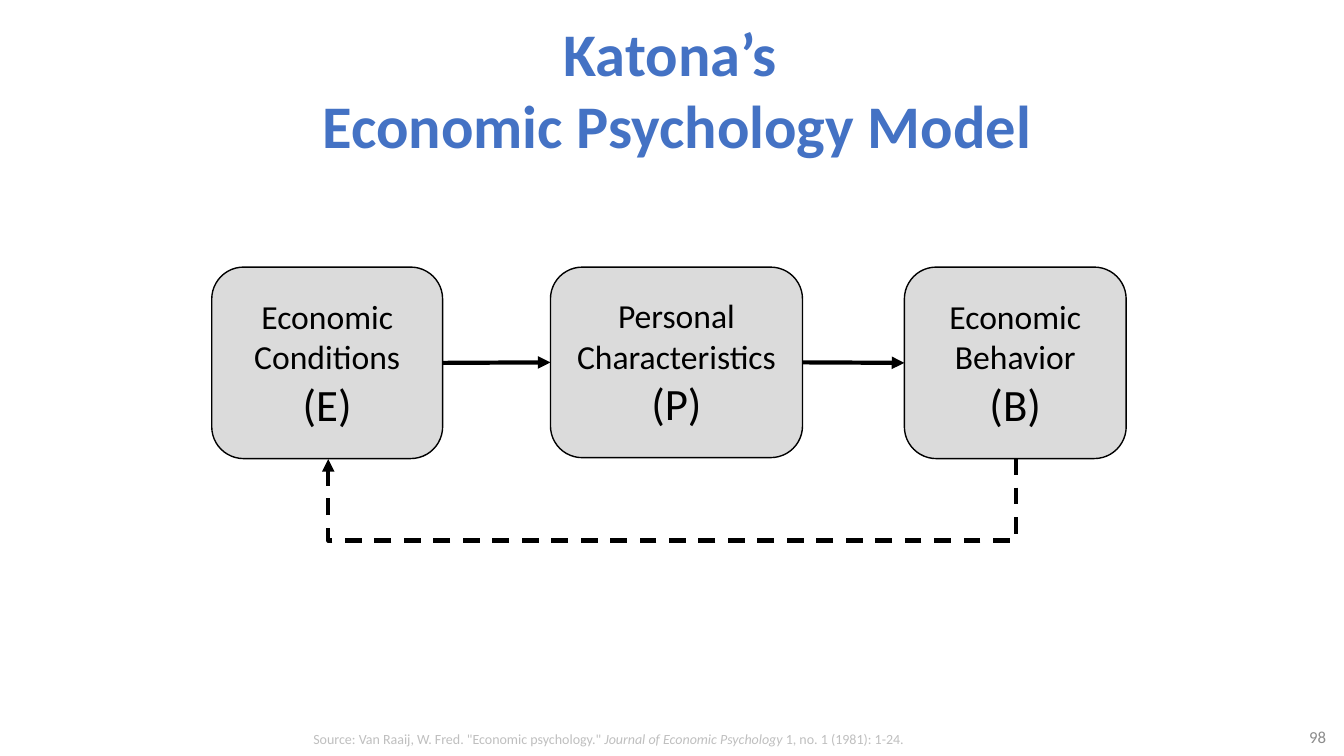
from lxml.etree import SubElement
from pptx import Presentation
from pptx.dml.color import RGBColor
from pptx.enum.dml import MSO_LINE
from pptx.enum.shapes import MSO_CONNECTOR, MSO_SHAPE
from pptx.enum.text import MSO_ANCHOR, PP_ALIGN
from pptx.oxml.ns import qn
from pptx.util import Inches, Pt


def write_line(paragraph, pieces, align, color, **font_format):
    """Fill a paragraph with (text, format) runs; a newline piece is a line break."""
    paragraph.alignment = align
    for text, extra in pieces:
        if text == "\n":
            paragraph.add_line_break()
            continue
        run = paragraph.add_run()
        run.text = text
        run.font.color.rgb = RGBColor.from_string(color)
        for name, value in {"name": "Calibri", **font_format, **extra}.items():
            setattr(run.font, name, value)


def style_arrow(connector):
    connector.line.color.rgb = RGBColor.from_string("000000")
    connector.line.width = Pt(3)
    properties = connector._element.spPr
    SubElement(properties.get_or_add_ln(), qn("a:tailEnd"), type="triangle")
    SubElement(properties, qn("a:effectLst"))


presentation = Presentation()
presentation.slide_width = Inches(13.33)
presentation.slide_height = Inches(7.5)
slide = presentation.slides.add_slide(presentation.slide_layouts[6])

# Title, source and slide number
source = [
    ('Source: Van Raaij, W. Fred. "Economic psychology." ', {}),
    ("Journal of Economic Psychology", {"italic": True}),
    (" 1, no. 1 (1981): 1-24.", {}),
]
title = [
    ("Katona’s ", {"bold": True}),
    ("\n", {}),
    ("Economic Psychology Model", {"bold": True}),
]
texts = [
    ((0.58, 0.15, 12.27, 1.45), title, PP_ALIGN.CENTER, "4472C4", 43.2, MSO_ANCHOR.MIDDLE),
    ((3.01, 7.2, 7.3, 0.27), source, PP_ALIGN.LEFT, "BFBFBF", 10, MSO_ANCHOR.TOP),
    ((12.2, 7.18, 1.05, 0.26), [("98", {})], PP_ALIGN.RIGHT, "8C8C8C", 12, MSO_ANCHOR.MIDDLE),
]
for place, pieces, align, color, size, anchor in texts:
    frame = slide.shapes.add_textbox(*map(Inches, place)).text_frame
    frame.word_wrap = True
    frame.vertical_anchor = anchor
    write_line(frame.paragraphs[0], pieces, align, color, size=Pt(size))

# Model stages
stages = [
    (2.1, 2.29, 1.9, ["Economic Conditions", "(E)"]),
    (5.46, 2.5, 1.89, ["Personal Characteristics", "(P)"]),
    (8.97, 2.2, 1.9, ["Economic", "Behavior", "(B)"]),
]
boxes = []
for left, width, height, lines in stages:
    box = slide.shapes.add_shape(
        MSO_SHAPE.ROUNDED_RECTANGLE, Inches(left), Inches(2.65), Inches(width), Inches(height))
    box.shadow.inherit = False
    box.fill.solid()
    box.fill.fore_color.rgb = RGBColor.from_string("DBDBDB")
    box.line.color.rgb = RGBColor.from_string("000000")
    box.line.width = Pt(1)
    frame = box.text_frame
    frame.word_wrap = True
    frame.vertical_anchor = MSO_ANCHOR.MIDDLE
    for index, text in enumerate(lines):
        paragraph = frame.add_paragraph() if index else frame.paragraphs[0]
        size = Pt(32 if text.startswith("(") else 24)
        write_line(paragraph, [(text, {})], PP_ALIGN.CENTER, "000000", size=size)
    boxes.append(box)

# Forward arrows
for start, end in zip(boxes, boxes[1:]):
    arrow = slide.shapes.add_connector(MSO_CONNECTOR.STRAIGHT, 0, 0, 0, 0)
    arrow.begin_connect(start, 3)
    arrow.end_connect(end, 1)
    style_arrow(arrow)

# Feedback arrow: a quarter-turned elbow that dips 0.83 inches below the boxes
span, drop, dip = 6.82, 0.01, 0.83
feedback = slide.shapes.add_connector(
    MSO_CONNECTOR.ELBOW, Inches(6.66), Inches(1.14), Inches(6.66 + drop), Inches(1.14 + span))
style_arrow(feedback)
feedback.line.dash_style = MSO_LINE.DASH
properties = feedback._element.spPr
properties.find(qn("a:xfrm")).set("rot", str(90 * 60000))
adjustments = properties.find(qn("a:prstGeom")).get_or_add_avLst()
SubElement(adjustments, qn("a:gd"), name="adj1", fmla=f"val {round(dip / drop * 100000)}")

presentation.save("out.pptx")
